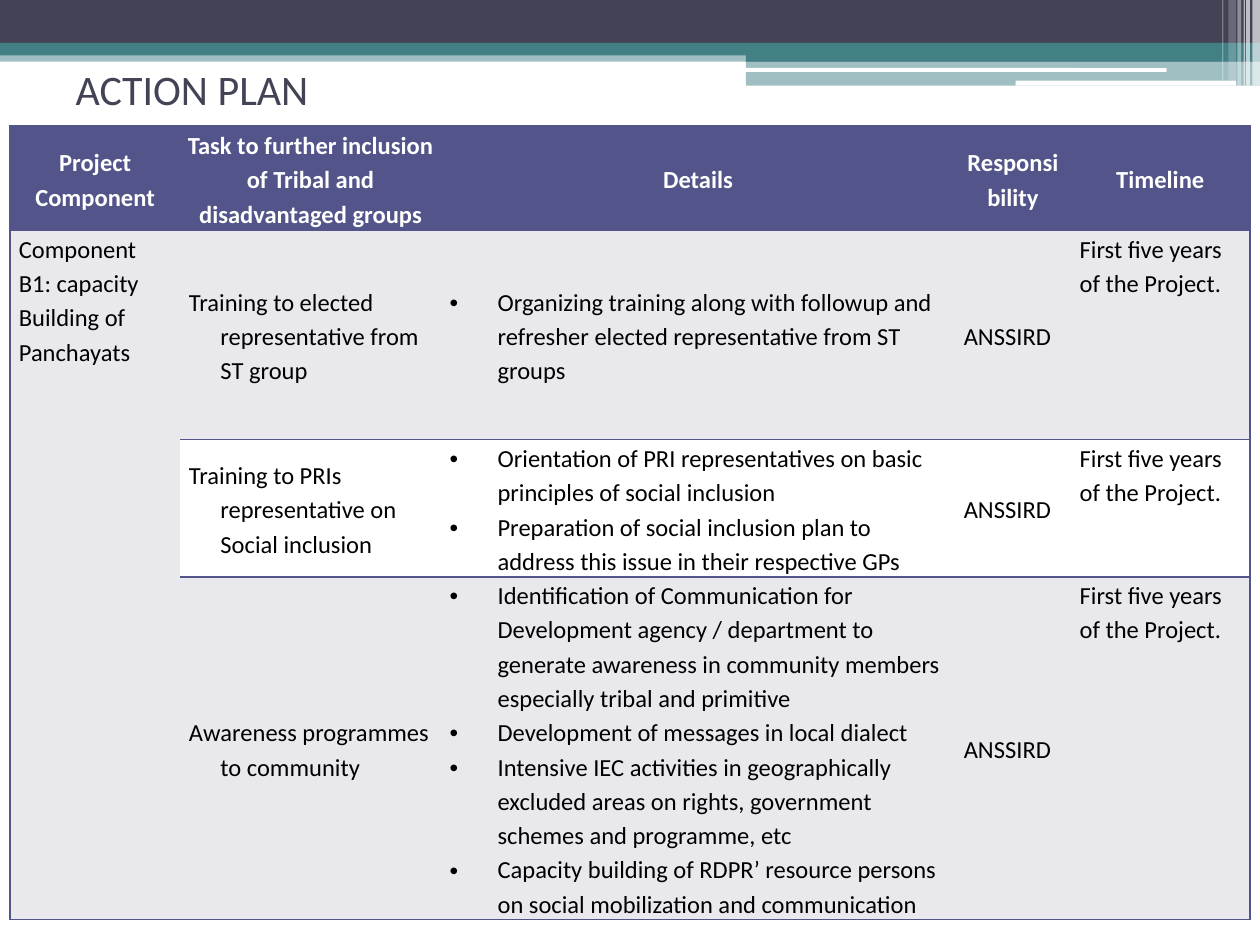
from dataclasses import dataclass

from lxml.etree import SubElement
from pptx import Presentation
from pptx.dml.color import RGBColor
from pptx.enum.shapes import MSO_SHAPE as Shape
from pptx.enum.text import MSO_ANCHOR as Anchor, PP_ALIGN as Align
from pptx.oxml.ns import qn
from pptx.util import Inches, Pt


@dataclass(frozen=True)
class Theme:
    font: str = "Calibri"
    head: int = 24
    text: int = 14
    dark: str = "424456"
    teal: str = "438086"
    blue: str = "53548A"
    pale: str = "E9E9ED"
    white: str = "FFFFFF"
    black: str = "000000"


@dataclass(frozen=True)
class Bar:
    """A plain band; lengths are percent of the slide, alpha is percent."""
    x: float
    y: float
    w: float
    h: float
    fill: str
    alpha: int = 100
    kind: Shape = Shape.RECTANGLE


@dataclass(frozen=True)
class Task:
    name: str
    steps: tuple[str, ...]
    high: float
    fill: str
    who: str = "ANSSIRD"
    due: str = "First five years of the Project."


T = Theme()
WIDE, HIGH = Inches(10), Inches(7.5)
ROUND = Shape.ROUNDED_RECTANGLE

BARS = [
    Bar(0, 5.33, 100, 1.2, T.teal, 50),
    Bar(0, 0, 100, 4.53, T.dark),
    Bar(0, 4.53, 100, 1.33, T.teal),
    Bar(59.2, 5.2, 40.8, 1.33, T.teal),
    Bar(59.2, 6.4, 40.8, 2.67, T.teal, 50),
    Bar(59.1, 7.2, 33.5, 0.4, T.white, kind=ROUND),
    Bar(80.6, 8.53, 17.5, 0.53, T.white, kind=ROUND),
] + [
    Bar(x, 0, w, h, T.white, alpha)
    for x, w, h, alpha in [
        (99.4, 0.6, 9.07, 65), (98.9, 0.3, 9.07, 65), (98.7, 0.1, 9.07, 60),
        (98.2, 0.3, 9.07, 40), (97.5, 0.6, 8.53, 20), (97, 0.1, 8.53, 30),
    ]
]

COLS = {
    "Project Component": 13.5,
    "Task to further inclusion of Tribal and disadvantaged groups": 20.7,
    "Details": 40.8,
    "Responsibility": 9.2,
    "Timeline": 14.2,
}
TOP_ROW = 11.07
PART = "Component B1: capacity Building of Panchayats"
TASKS = [
    Task("Training to elected representative from ST group",
         ("Organizing training along with followup and refresher elected "
          "representative from ST groups",), 22.13, T.pale),
    Task("Training to PRIs representative on Social inclusion",
         ("Orientation of PRI representatives on basic principles of social "
          "inclusion",
          "Preparation of social inclusion plan to address this issue in "
          "their respective GPs"), 14.53, T.white),
    Task("Awareness programmes to community",
         ("Identification of Communication for Development agency / "
          "department to generate awareness in community members especially "
          "tribal and primitive",
          "Development of messages in local dialect",
          "Intensive IEC activities in geographically excluded areas on "
          "rights, government schemes and programme, etc",
          "Capacity building of RDPR’ resource persons on social "
          "mobilization and communication"), 36.27, T.pale),
]


def across(share: float) -> int:
    return round(WIDE * share / 100)


def down(share: float) -> int:
    return round(HIGH * share / 100)


def style(item, **values) -> None:
    for name, value in values.items():
        setattr(item, name, value)


def ink(font, size: int, color: str, bold: bool = False) -> None:
    style(font, name=T.font, size=Pt(size), bold=bold)
    font.color.rgb = RGBColor.from_string(color)


def draw_bar(slide, bar: Bar) -> None:
    shape = slide.shapes.add_shape(
        bar.kind, across(bar.x), down(bar.y), across(bar.w), down(bar.h))
    shape.shadow.inherit = False
    shape.line.fill.background()
    shape.fill.solid()
    shape.fill.fore_color.rgb = RGBColor.from_string(bar.fill)
    if bar.alpha < 100:
        color = shape.fill._xPr.find(".//" + qn("a:srgbClr"))
        SubElement(color, qn("a:alpha"), val=str(bar.alpha * 1000))


def draw_title(slide) -> None:
    title = slide.shapes.title
    style(title, left=across(5), top=down(1.07),
          width=across(90), height=down(16.67))
    frame = title.text_frame
    style(frame, text="ACTION PLAN", vertical_anchor=Anchor.MIDDLE)
    frame.paragraphs[0].alignment = Align.LEFT
    ink(frame.paragraphs[0].runs[0].font, T.head, T.dark)
    slide.shapes._spTree.append(title._element)  # in front of the bars


def set_edges(cell, sides: str) -> None:
    """Rule the named sides (of L, R, T, B) and clear the rest."""
    props = cell._tc.get_or_add_tcPr()
    for side in "LRTB":
        line = SubElement(props, qn("a:ln" + side), w=str(Pt(1)))
        if side in sides:
            fill = SubElement(line, qn("a:solidFill"))
            SubElement(fill, qn("a:srgbClr"), val=T.blue)
        else:
            SubElement(line, qn("a:noFill"))


def fill_cell(cell, lines: tuple[str, ...], fill: str, edges: str,
              head: bool = False, mid: bool = True,
              hang: float = 0, dot: bool = False) -> None:
    set_edges(cell, edges)
    cell.fill.solid()
    cell.fill.fore_color.rgb = RGBColor.from_string(fill)
    pad = Inches(0.05 if head else 0.07)
    style(cell, margin_left=pad, margin_right=pad, margin_top=0,
          margin_bottom=0, vertical_anchor=Anchor.MIDDLE if mid else Anchor.TOP)
    cell.text_frame.text = "\n".join(lines)
    for para in cell.text_frame.paragraphs:
        style(para, line_spacing=1.15,
              alignment=Align.CENTER if head else Align.LEFT)
        ink(para.runs[0].font, T.text, T.white if head else T.black, head)
        props = para._p.get_or_add_pPr()
        if hang:
            props.set("marL", str(Inches(hang)))
            props.set("indent", str(-Inches(hang)))
        if dot:
            SubElement(props, qn("a:buFont"), typeface="Arial")
            SubElement(props, qn("a:buChar"), char="•")


def draw_table(slide) -> None:
    highs = [TOP_ROW] + [task.high for task in TASKS]
    table = slide.shapes.add_table(
        len(highs), len(COLS), across(0.8), down(13.33),
        across(sum(COLS.values())), down(sum(highs))).table
    style(table, first_row=False, horz_banding=False)
    for col, share in zip(table.columns, COLS.values()):
        col.width = across(share)
    for row, share in zip(table.rows, highs):
        row.height = down(share)

    ends = {0: "LTB", len(COLS) - 1: "RTB"}
    for at, name in enumerate(COLS):
        fill_cell(table.cell(0, at), (name,), T.blue, ends.get(at, "TB"),
                  head=True)
    table.cell(1, 0).merge(table.cell(len(TASKS), 0))
    fill_cell(table.cell(1, 0), (PART,), T.pale, "LTB", mid=False)
    for at, task in enumerate(TASKS, 1):
        looks = [
            ((task.name,), {"hang": 0.25}),
            (task.steps, {"hang": 0.38, "dot": True}),
            ((task.who,), {}),
            ((task.due,), {"mid": False}),
        ]
        for col, (lines, look) in enumerate(looks, 1):
            fill_cell(table.cell(at, col), lines, task.fill,
                      ends.get(col, "TB"), **look)


def main() -> None:
    deck = Presentation()
    style(deck, slide_width=WIDE, slide_height=HIGH)
    slide = deck.slides.add_slide(deck.slide_layouts[5])
    for bar in BARS:
        draw_bar(slide, bar)
    draw_title(slide)
    draw_table(slide)
    deck.save("out.pptx")


if __name__ == "__main__":
    main()
